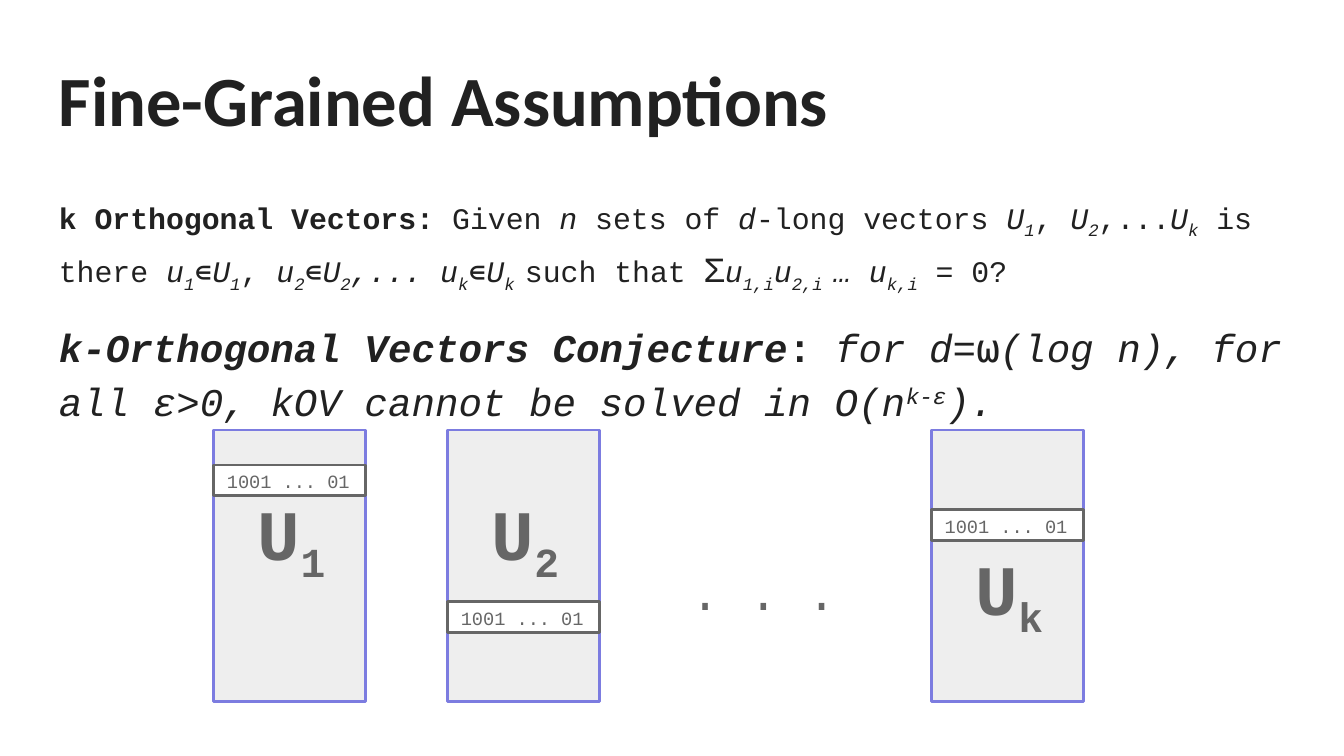
from dataclasses import dataclass

from pptx import Presentation
from pptx import util as u
from pptx.dml.color import RGBColor
from pptx.enum import shapes, text


@dataclass(frozen=True)
class Theme:
    # Colours
    ink: str = "212121"
    gray: str = "666666"
    pale: str = "EEEEEE"
    white: str = "FFFFFF"
    edge: str = "7C7CE0"
    # Fonts
    head: str = "Calibri"
    mono: str = "Courier New"
    # Type sizes
    title: float = 37.8
    body: float = 16
    sigma: float = 19
    claim: float = 21
    name: float = 38
    bits: float = 10
    dots: float = 26


T = Theme()
BASE = {"_": "-25000", "^": "30000"}


def write(para, runs, size, font=T.mono, color=T.gray, space=None, before=None):
    """Add (text, marks) runs: b bold, i italic, _ subscript, ^ superscript, + sigma size."""
    para.line_spacing = space
    if before:
        para.space_before = u.Pt(before)
    for words, marks in runs:
        run = para.add_run()
        run.text = words
        run.font.name = font
        run.font.size = u.Pt(T.sigma if "+" in marks else size)
        run.font.bold = "b" in marks
        run.font.italic = "i" in marks
        run.font.color.rgb = RGBColor.from_string(color)
        for mark, shift in BASE.items():
            if mark in marks:
                run.font._element.set("baseline", shift)


class Maker:
    def __init__(self, theme, slide):
        self.theme, self.slide = theme, slide

    def rect(self, x, y, w, h, fill, line):
        box = self.slide.shapes.add_shape(
            shapes.MSO_SHAPE.RECTANGLE, u.Pt(x), u.Pt(y), u.Pt(w), u.Pt(h))
        box.shadow.inherit = False
        box.fill.solid()
        box.fill.fore_color.rgb = RGBColor.from_string(fill)
        box.line.color.rgb = RGBColor.from_string(line)
        box.line.width = u.Pt(1.5)

    def label(self, x, y, w, h, runs, size, middle=False, **style):
        box = self.slide.shapes.add_textbox(u.Pt(x), u.Pt(y), u.Pt(w), u.Pt(h))
        frame = box.text_frame
        frame.word_wrap = True
        frame.margin_left = frame.margin_right = u.Pt(7.2)
        frame.margin_top = frame.margin_bottom = u.Pt(7.2)
        anchor = text.MSO_ANCHOR
        frame.vertical_anchor = anchor.MIDDLE if middle else anchor.TOP
        write(frame.paragraphs[0], runs, size, **style)
        return frame

    def stack(self, x, sub, name_y, row_y):
        """One vector set: column, its name and one highlighted row."""
        t, top, wide, tall, row = self.theme, 230.4, 81.4, 145.4, 16.6
        self.rect(x, top, wide, tall, t.pale, t.edge)
        self.label(x + 16.6, name_y, 56.2, 46, [("U", "b"), (sub, "b_")], t.name)
        self.rect(x, row_y, wide, row, t.white, t.gray)
        self.label(x, row_y + 0.4, wide, row, [("1001 ... 01", "")], t.bits, middle=True)


PROBLEM = [
    ("k Orthogonal Vectors:", "b"), (" Given ", ""), ("n", "i"),
    (" sets of ", ""), ("d", "i"), ("-long vectors ", ""),
    ("U", "i"), ("1", "i_"), (", ", ""), ("U", "i"), ("2", "i_"),
    (",...", ""), ("U", "i"), ("k", "i_"), (" is there ", ""),
    ("u", "i"), ("1", "i_"), ("∊U", "i"), ("1", "i_"), (", ", ""),
    ("u", "i"), ("2", "i_"), ("∊U", "i"), ("2", "i_"),
    (",... u", "i"), ("k", "i_"), ("∊U", "i"), ("k ", "i_"),
    ("such that ", ""), ("Σ", "+"), ("u", "i"), ("1,i", "i_"),
    ("u", "i"), ("2,i ", "i_"), ("… u", "i"), ("k,i", "i_"), (" = 0?", ""),
]
CLAIM = [
    ("k-Orthogonal Vectors Conjecture", "bi"), (": ", "b"),
    ("for d=⍵(log n), for all ε>0, kOV cannot be solved in O(n", "i"),
    ("k-ε", "i^"), (").", "i"),
]
# Left edge, subscript, top of name, top of row
STACKS = [(114.5, "1", 254.9, 249.1), (239.8, "2", 254.9, 322.4), (499, "k", 284.4, 272.9)]


def main():
    deck = Presentation()
    deck.slide_width, deck.slide_height = u.Pt(720), u.Pt(405)
    page = Maker(T, deck.slides.add_slide(deck.slide_layouts[6]))

    # Title
    page.label(24.5, 23, 671, 63.4, [("Fine-Grained Assumptions", "b")],
               T.title, font=T.head, color=T.ink)

    # Problem and conjecture
    prose = {"color": T.ink, "space": 1.15}
    frame = page.label(24.5, 96.5, 695.5, 279.4, PROBLEM, T.body, **prose)
    write(frame.add_paragraph(), CLAIM, T.claim, before=12, **prose)

    # Vector sets
    for stack in STACKS:
        page.stack(*stack)
    page.label(362.9, 293.8, 103.7, 49, [(". . .", "")], T.dots)

    deck.save("out.pptx")


if __name__ == "__main__":
    main()
